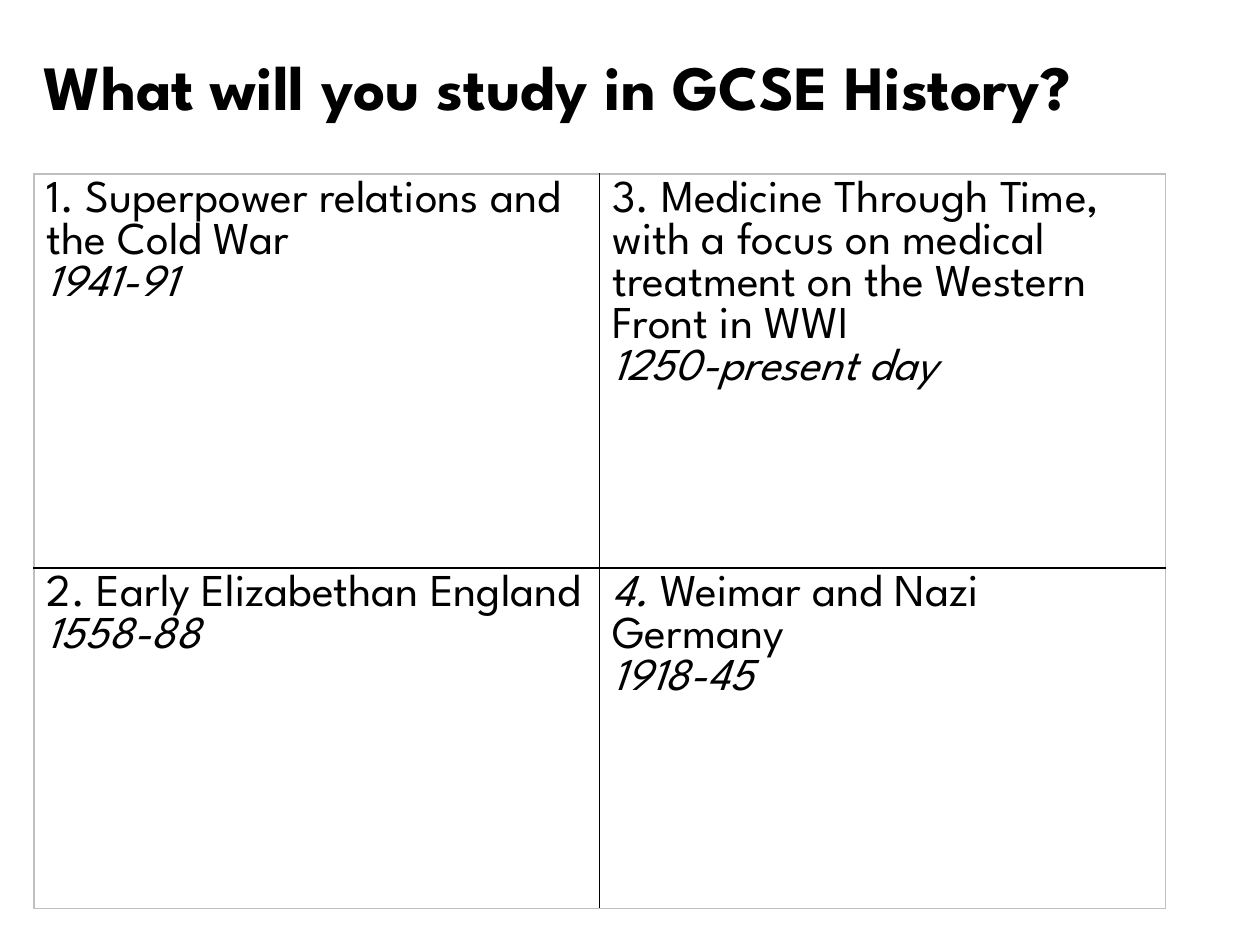
from lxml import etree
from pptx import Presentation
from pptx.dml.color import RGBColor
from pptx.enum import text
from pptx.oxml.ns import qn
from pptx.util import Inches, Pt

HEADING = "What will you study in GCSE History?"
UNITS = [
    [
        ("1. ", "Superpower relations and the Cold War", "1941-91"),
        ("3. ", "Medicine Through Time, with a focus on medical treatment "
                "on the Western Front in WWI", "1250-present day"),
    ],
    [
        ("2. ", "Early Elizabethan England", "1558-88"),
        ("4. ", "Weimar and Nazi Germany", "1918-45"),
    ],
]
ITALIC_NUMBERS = {"4. "}
COLUMN_WIDTHS = [4.49, 4.49]
ROW_HEIGHTS = [3.13, 2.7]
COLORS = {"ink": "000000", "paper": "FFFFFF", "frame": "BFBFBF"}
FONT = "League Spartan"


def style(run, size, bold=False, italic=False):
    run.font.name = FONT
    run.font.size = Pt(size)
    run.font.bold = bold
    run.font.italic = italic
    run.font.color.rgb = RGBColor.from_string(COLORS["ink"])


def add_run(paragraph, words, italic=False):
    run = paragraph.add_run()
    run.text = words
    style(run, 26, italic=italic)


def set_borders(cell, outer_sides):
    properties = cell._tc.get_or_add_tcPr()
    for position, side in enumerate(("lnL", "lnR", "lnT", "lnB")):
        color = COLORS["frame" if side in outer_sides else "ink"]
        line = etree.Element(qn(f"a:{side}"), w=str(Pt(1)))
        fill = etree.SubElement(line, qn("a:solidFill"))
        etree.SubElement(fill, qn("a:srgbClr"), val=color)
        properties.insert(position, line)


def fill_cell(cell, number, topic, period):
    cell.fill.solid()
    cell.fill.fore_color.rgb = RGBColor.from_string(COLORS["paper"])
    topic_line = cell.text_frame.paragraphs[0]
    if number in ITALIC_NUMBERS:
        add_run(topic_line, number, italic=True)
        add_run(topic_line, topic)
    else:
        add_run(topic_line, number + topic)
    add_run(cell.text_frame.add_paragraph(), period, italic=True)


def main():
    deck = Presentation()
    deck.slide_width, deck.slide_height = Inches(10), Inches(7.5)
    slide = deck.slides.add_slide(deck.slide_layouts[6])

    heading = slide.shapes.add_textbox(
        Inches(0.25), Inches(0.21), Inches(9), Inches(0.93)).text_frame
    heading.word_wrap = True
    heading.vertical_anchor = text.MSO_ANCHOR.MIDDLE
    heading.text = HEADING
    style(heading.paragraphs[0].runs[0], 36, bold=True)

    units = slide.shapes.add_table(
        len(ROW_HEIGHTS), len(COLUMN_WIDTHS), Inches(0.27), Inches(1.38),
        Inches(sum(COLUMN_WIDTHS)), Inches(sum(ROW_HEIGHTS))).table
    units.first_row = units.horz_banding = False
    for column, width in zip(units.columns, COLUMN_WIDTHS):
        column.width = Inches(width)
    for row, height in zip(units.rows, ROW_HEIGHTS):
        row.height = Inches(height)

    for r, unit_row in enumerate(UNITS):
        for c, unit in enumerate(unit_row):
            cell = units.cell(r, c)
            fill_cell(cell, *unit)
            set_borders(cell, {("lnL", "lnR")[c], ("lnT", "lnB")[r]})

    deck.save("out.pptx")


if __name__ == "__main__":
    main()
